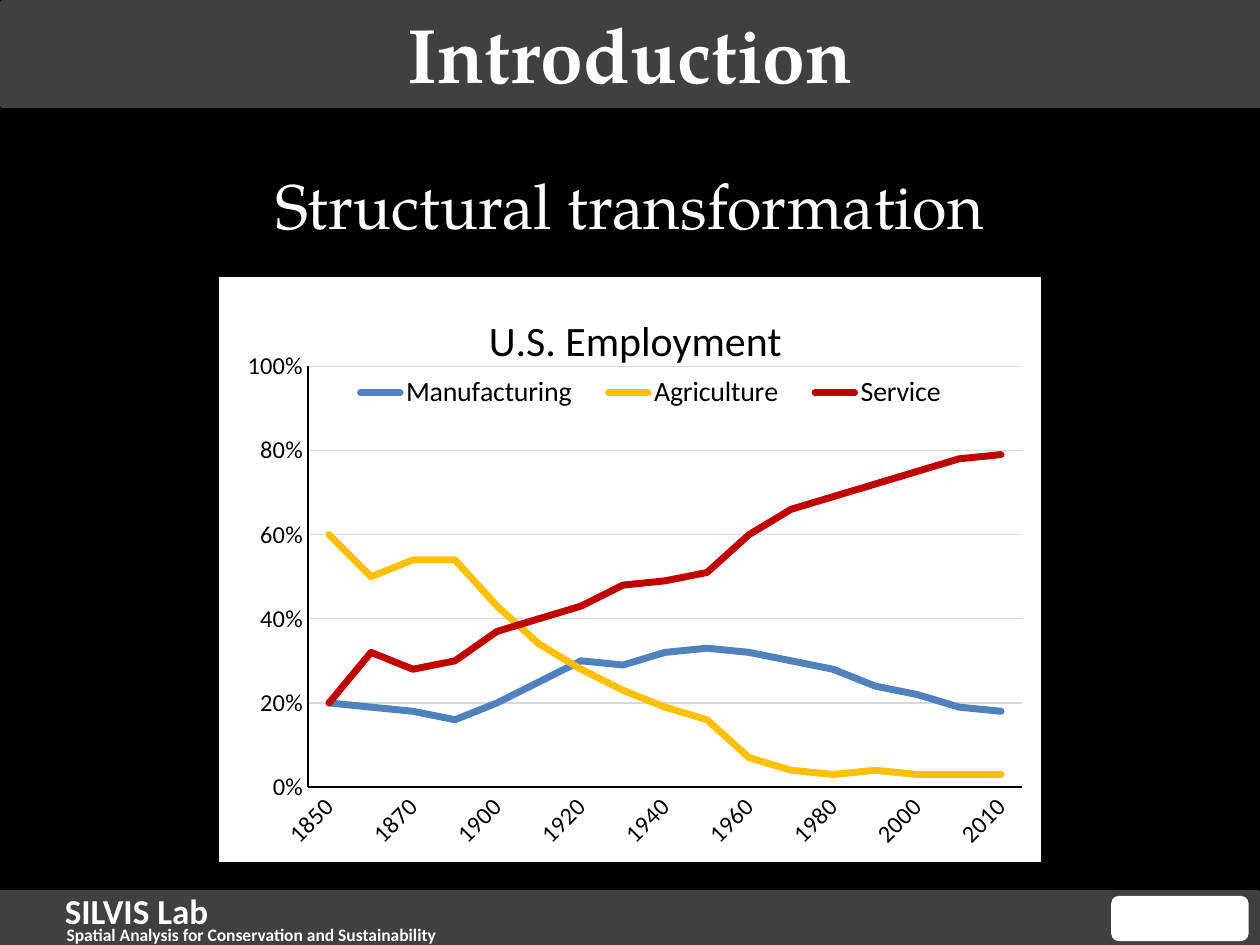
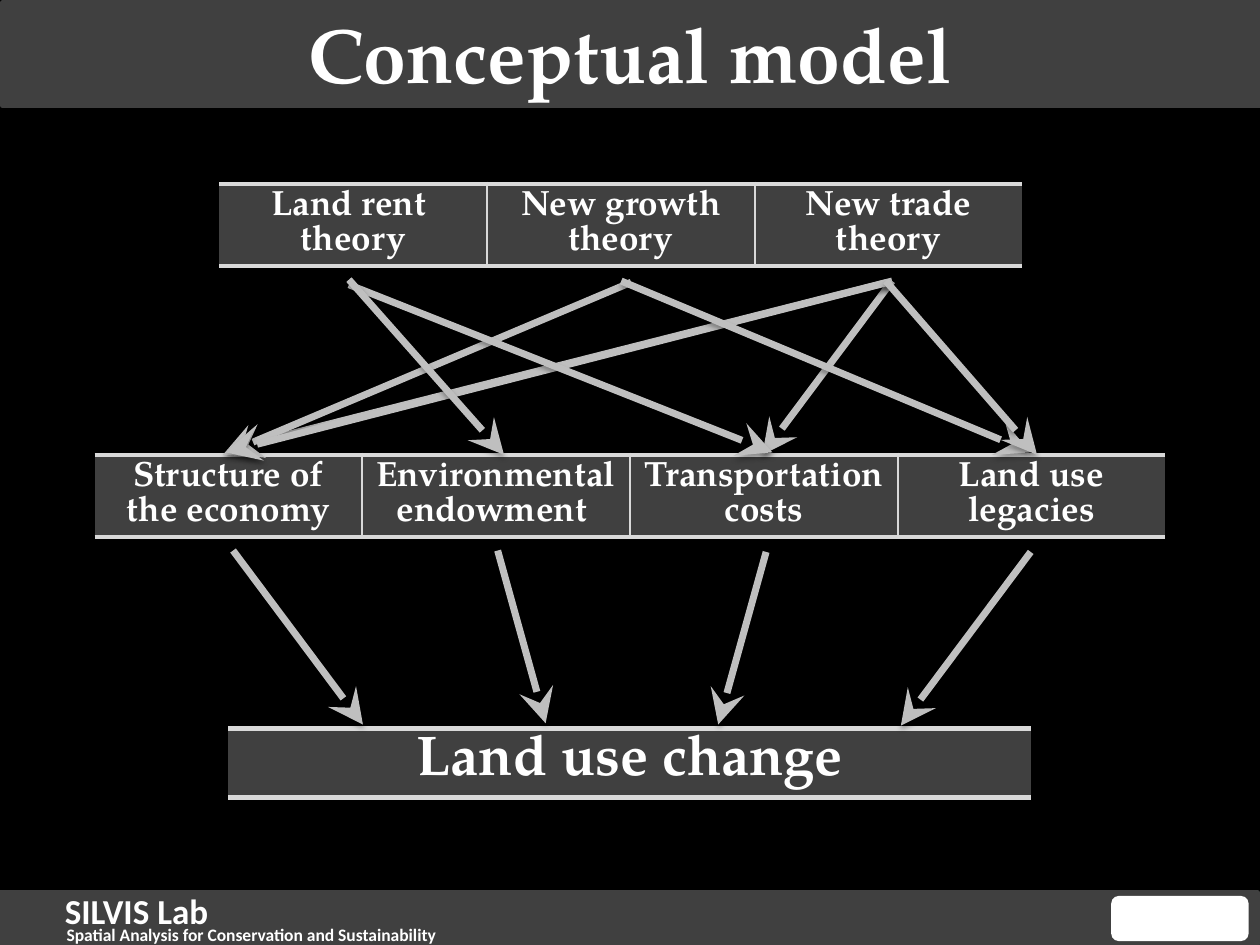
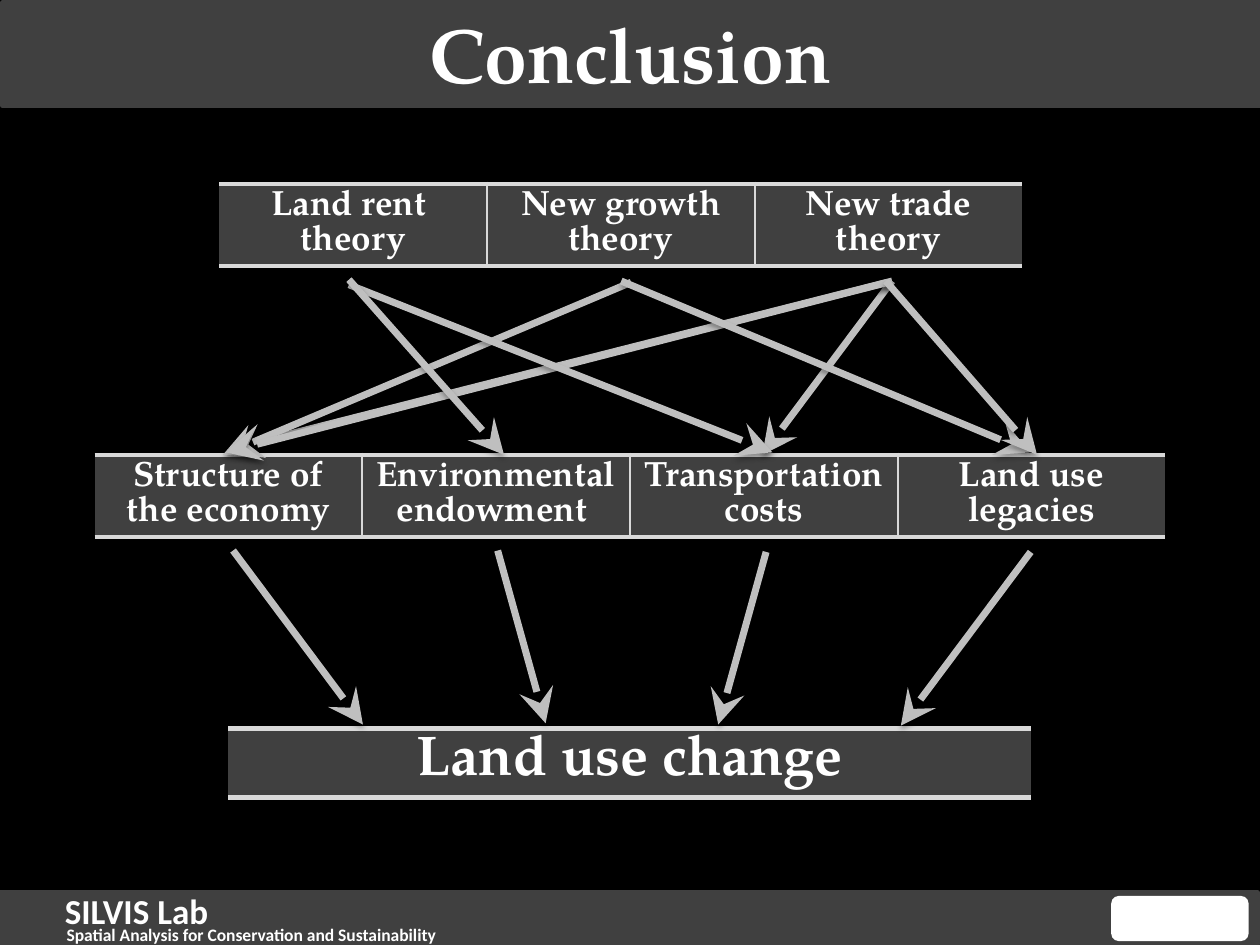
from dataclasses import dataclass
from typing import NamedTuple

from lxml import etree
from pptx import Presentation
from pptx import util as u
from pptx.chart.data import CategoryChartData
from pptx.dml.color import RGBColor
from pptx.enum import chart as ch, shapes, text
from pptx.oxml import parse_xml
from pptx.oxml.ns import nsdecls, qn

Pt = u.Pt


# Theme
@dataclass(frozen=True)
class Theme:
    black: str = "000000"
    white: str = "FFFFFF"
    band: str = "404040"
    border: str = "D9D9D9"
    arrow: str = "BFBFBF"
    blue: str = "4F81BD"
    gold: str = "FFC000"
    red: str = "C00000"
    serif: str = "TeX Gyre Pagella"
    sans: str = "Calibri"
    title: float = 44
    subtitle: float = 36
    outcome: float = 32
    box: float = 20
    lab: float = 20
    tagline: float = 10
    chart_title: float = 24
    legend: float = 16
    axis: float = 14


T = Theme()


class Rect(NamedTuple):
    left: float
    top: float
    width: float
    height: float

    def emu(self) -> list:
        return [Pt(v) for v in self]


class Band(NamedTuple):
    rect: Rect
    shape: int
    fill: str
    line: bool


class Label(NamedTuple):
    rect: Rect
    words: str
    font: str
    size: float
    bold: bool = True
    centred: bool = False


class BoxRow(NamedTuple):
    left: float
    top: float
    col_width: float
    height: float
    size: float
    words: list[str]


class Arrow(NamedTuple):
    x1: float
    y1: float
    x2: float
    y2: float


class Trend(NamedTuple):
    name: str
    color: str
    percents: list[int]


# Shared furniture
RECT = shapes.MSO_SHAPE.RECTANGLE
BANDS = [
    Band(Rect(1.5, 1.5, 718.5, 59), RECT, T.band, True),
    Band(Rect(0, 510, 718.5, 29.5), RECT, T.band, True),
    Band(Rect(635, 512, 78.5, 25.8), shapes.MSO_SHAPE.ROUNDED_RECTANGLE, T.white, False),
]
FOOTER = [
    Label(Rect(30, 504.7, 175, 31.5), "SILVIS Lab", T.sans, T.lab),
    Label(Rect(31, 524.2, 354, 12.2), "Spatial Analysis for Conservation and Sustainability",
          T.sans, T.tagline),
]

# Conceptual model
ROWS = [
    BoxRow(54, 260, 153, 46.8, T.box,
           ["Structure of the economy", "Environmental endowment ",
            "Transportation costs", "Land use legacies"]),
    BoxRow(125.3, 105.1, 153, 46.8, T.box,
           ["Land rent \vtheory", "New growth theory", "New trade theory"]),
    BoxRow(130.3, 416.2, 459, 39.4, T.outcome, ["Land use change"]),
]
ARROWS = [
    # theories to factors
    Arrow(509.8, 160.6, 435.6, 259.9),
    Arrow(509.8, 160.6, 130.3, 257),
    Arrow(360.7, 161.3, 127.4, 259.9),
    Arrow(507.6, 161.3, 128.9, 258.5),
    Arrow(199.4, 162.7, 441.4, 258.5),
    Arrow(355, 160.6, 589, 258.5),
    Arrow(199.4, 159.8, 288, 259.9),
    Arrow(506.2, 160.6, 592.6, 259.9),
    # factors to land use change
    Arrow(589, 315.4, 514.8, 414.7),
    Arrow(133.2, 314.6, 207.4, 414),
    Arrow(437.8, 315.4, 410.4, 414),
    Arrow(284.4, 314.6, 311.8, 413.3),
]

# U.S. employment
YEARS = [str(y) for y in (*range(1850, 1881, 10), *range(1900, 2001, 10), 2008, 2010)]
TRENDS = [
    Trend("Manufacturing", T.blue,
          [20, 19, 18, 16, 20, 25, 30, 29, 32, 33, 32, 30, 28, 24, 22, 19, 18]),
    Trend("Agriculture", T.gold,
          [60, 50, 54, 54, 43, 34, 28, 23, 19, 16, 7, 4, 3, 4, 3, 3, 3]),
    Trend("Service", T.red,
          [20, 32, 28, 30, 37, 40, 43, 48, 49, 51, 60, 66, 69, 72, 75, 78, 79]),
]


def rgb(color: str) -> RGBColor:
    return RGBColor.from_string(color)


def set_font(font, name: str, size: float, color: str, bold: bool = False) -> None:
    font.name, font.size, font.bold = name, Pt(size), bold
    font.color.rgb = rgb(color)


def set_line(line, color: str, width: float) -> None:
    line.color.rgb = rgb(color)
    line.width = Pt(width)


def add_band(s, band: Band) -> None:
    sp = s.shapes.add_shape(band.shape, *band.rect.emu())
    sp.shadow.inherit = False
    sp.fill.solid()
    sp.fill.fore_color.rgb = rgb(band.fill)
    if band.line:
        set_line(sp.line, band.fill, 3)
    else:
        sp.line.fill.background()


def add_label(s, label: Label) -> None:
    tf = s.shapes.add_textbox(*label.rect.emu()).text_frame
    tf.word_wrap = True
    p = tf.paragraphs[0]
    if label.centred:
        tf.vertical_anchor = text.MSO_ANCHOR.MIDDLE
        p.alignment = text.PP_ALIGN.CENTER
    r = p.add_run()
    r.text = label.words
    set_font(r.font, label.font, label.size, T.white, label.bold)


def add_slide(prs, title: str):
    s = prs.slides.add_slide(prs.slide_layouts[6])
    s.background.fill.solid()
    s.background.fill.fore_color.rgb = rgb(T.black)
    for band in BANDS:
        add_band(s, band)
    for label in FOOTER:
        add_label(s, label)
    add_label(s, Label(Rect(0.5, 0, 719.5, 60), title, T.serif, T.title, centred=True))
    return s


def set_borders(cell, first: bool, last: bool) -> None:
    widths = {"lnL": 0 if first else 1.5, "lnR": 0 if last else 1.5, "lnT": 3, "lnB": 3}
    tc_pr = cell._tc.get_or_add_tcPr()
    for tag, width in widths.items():
        ln = etree.SubElement(tc_pr, qn(f"a:{tag}"), w=str(Pt(width)))
        if width:
            fill = etree.SubElement(ln, qn("a:solidFill"))
            etree.SubElement(fill, qn("a:srgbClr"), val=T.border)
        else:
            etree.SubElement(ln, qn("a:noFill"))


def add_box_row(s, row: BoxRow) -> None:
    n = len(row.words)
    rect = Rect(row.left, row.top, n * row.col_width, row.height)
    table = s.shapes.add_table(1, n, *rect.emu()).table
    table.first_row = table.horz_banding = False
    for i, words in enumerate(row.words):
        table.columns[i].width = Pt(row.col_width)
        cell = table.cell(0, i)
        set_borders(cell, i == 0, i == n - 1)
        cell.fill.solid()
        cell.fill.fore_color.rgb = rgb(T.band)
        cell.vertical_anchor = text.MSO_ANCHOR.MIDDLE
        p = cell.text_frame.paragraphs[0]
        p.alignment = text.PP_ALIGN.CENTER
        p.line_spacing = Pt(row.size * 0.98)
        for k, part in enumerate(words.split("\v")):
            if k:
                p.add_line_break()
            r = p.add_run()
            r.text = part
            set_font(r.font, T.serif, row.size, T.white, True)


def add_arrow(s, arrow: Arrow) -> None:
    c = s.shapes.add_connector(shapes.MSO_CONNECTOR.STRAIGHT, *[Pt(v) for v in arrow])
    set_line(c.line, T.arrow, 4)
    sp_pr = c._element.spPr
    etree.SubElement(sp_pr.find(qn("a:ln")), qn("a:tailEnd"), type="stealth", w="lg", len="lg")
    sp_pr.append(parse_xml(
        f'<a:effectLst {nsdecls("a")}><a:outerShdw blurRad="{Pt(3.1)}" dist="{Pt(1.8)}" '
        f'dir="5400000" rotWithShape="0"><a:srgbClr val="{T.black}"><a:alpha val="35000"/>'
        '</a:srgbClr></a:outerShdw></a:effectLst>'))


def add_model_slide(prs, title: str) -> None:
    s = add_slide(prs, title)
    for row in ROWS:
        add_box_row(s, row)
    for arrow in ARROWS:
        add_arrow(s, arrow)


def set_layout(parent, index: int, inner: bool = False, **fractions: float) -> None:
    """Place a chart part by fractions of the chart area."""
    for old in parent.findall(qn("c:layout")):
        parent.remove(old)
    layout = etree.Element(qn("c:layout"))
    manual = etree.SubElement(layout, qn("c:manualLayout"))
    if inner:
        etree.SubElement(manual, qn("c:layoutTarget"), val="inner")
    for axis in "xy":
        etree.SubElement(manual, qn(f"c:{axis}Mode"), val="edge")
    for key, value in fractions.items():
        etree.SubElement(manual, qn(f"c:{key}"), val=str(value))
    parent.insert(index, layout)


def style_axes(chart) -> None:
    for axis in (chart.category_axis, chart.value_axis):
        axis.major_tick_mark = axis.minor_tick_mark = ch.XL_TICK_MARK.NONE
        set_line(axis.format.line, T.black, 0.75)
        set_font(axis.tick_labels.font, T.sans, T.axis, T.black)
    years, share = chart.category_axis, chart.value_axis
    years._element.txPr.find(qn("a:bodyPr")).set("rot", "-2700000")
    skip = etree.Element(qn("c:tickLblSkip"), val="2")
    years._element.find(qn("c:noMultiLvlLbl")).addprevious(skip)
    share.minimum_scale, share.maximum_scale, share.major_unit = 0, 1, 0.2
    share.tick_labels.number_format = "0%"
    share.tick_labels.number_format_is_linked = False
    share.has_major_gridlines = True
    set_line(share.major_gridlines.format.line, T.border, 0.75)


def add_employment_chart(s) -> None:
    data = CategoryChartData(number_format="0%")
    data.categories = YEARS
    for trend in TRENDS:
        data.add_series(trend.name, [v / 100 for v in trend.percents])
    rect = Rect(123.1, 156.2, 473.8, 338.4)
    chart = s.shapes.add_chart(ch.XL_CHART_TYPE.LINE, *rect.emu(), data).chart
    set_font(chart.font, T.sans, T.box, T.black)

    # Title and legend
    chart.has_title = True
    r = chart.chart_title.text_frame.paragraphs[0].add_run()
    r.text = "U.S. Employment"
    set_font(r.font, T.sans, T.chart_title, T.black)
    set_layout(chart.chart_title._element, 1, x=0.32, y=0.05)
    chart.has_legend = True
    chart.legend.position = ch.XL_LEGEND_POSITION.BOTTOM
    chart.legend.include_in_layout = False
    set_font(chart.legend.font, T.sans, T.legend, T.black)
    set_layout(chart.legend._element, 1, x=0.14, y=0.16, w=0.77, h=0.08)

    # Plot and series
    style_axes(chart)
    set_layout(chart._chartSpace.chart.plotArea, 0, inner=True, x=0.11, y=0.155, w=0.865, h=0.715)
    plot = chart.plots[0]
    plot.vary_by_categories = False
    for series, trend in zip(plot.series, TRENDS):
        series.smooth = False
        series.marker.style = ch.XL_MARKER_STYLE.NONE
        set_line(series.format.line, trend.color, 4)
        series._element.spPr.find(qn("a:ln")).set("cap", "rnd")

    # Chart area
    chart._chartSpace.chart.addnext(parse_xml(
        f'<c:spPr {nsdecls("c", "a")}><a:solidFill><a:srgbClr val="{T.white}"/></a:solidFill>'
        f'<a:ln w="{Pt(2)}"><a:solidFill><a:srgbClr val="{T.black}"/></a:solidFill></a:ln>'
        '</c:spPr>'))


def main() -> None:
    prs = Presentation()
    prs.slide_width, prs.slide_height = Pt(720), Pt(540)

    s = add_slide(prs, "Introduction")
    add_label(s, Label(Rect(36, 72, 648, 90), "Structural transformation",
                       T.serif, T.subtitle, bold=False, centred=True))
    add_employment_chart(s)

    for title in ("Conceptual model", "Conclusion"):
        add_model_slide(prs, title)

    prs.save("out.pptx")


if __name__ == "__main__":
    main()
